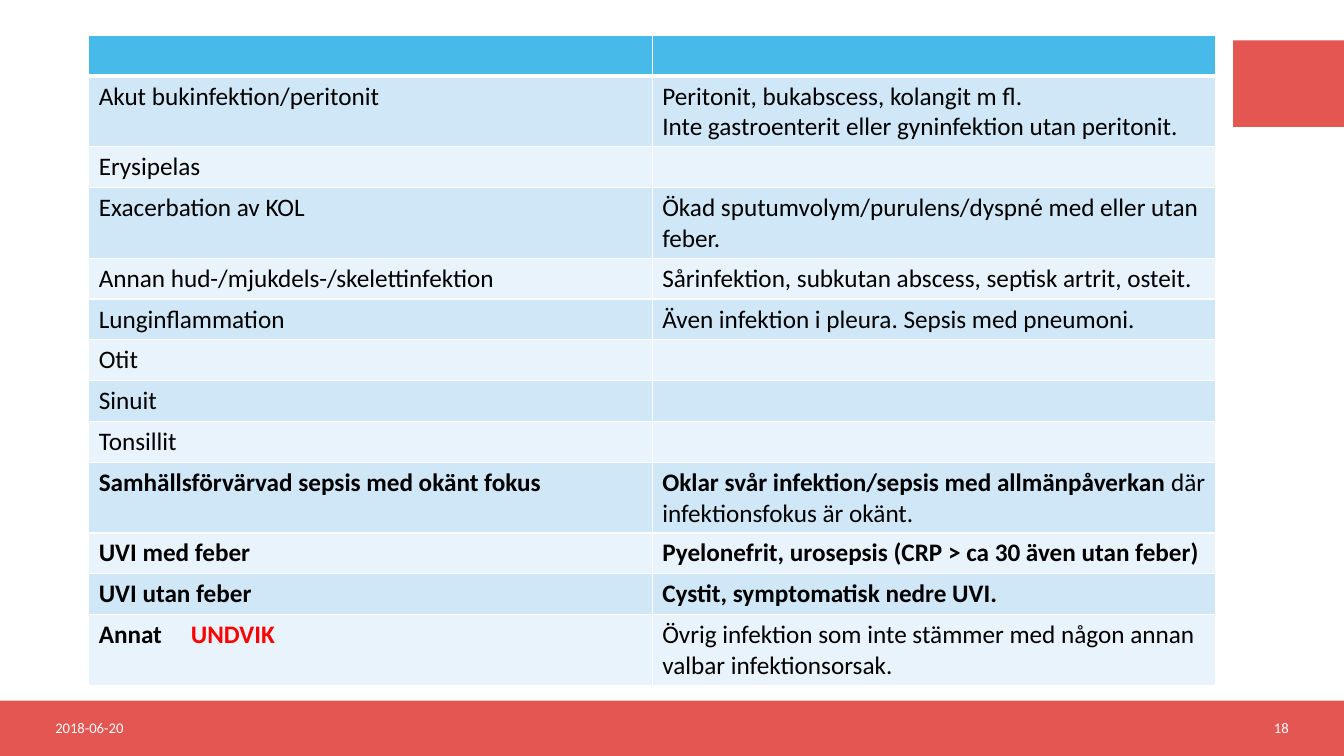
from pptx import Presentation
from pptx.dml.color import RGBColor as RGB
from pptx.enum.shapes import MSO_SHAPE as Shape
from pptx.enum.text import MSO_ANCHOR as Anchor, PP_ALIGN as Align
from pptx.oxml.ns import qn
from pptx.util import Inches, Pt
from lxml.etree import SubElement as Sub

RED = RGB(0xE4, 0x56, 0x51)
BLUE = RGB(0x47, 0xBA, 0xEA)
MID = RGB(0xCF, 0xE7, 0xF7)
PALE = RGB(0xE9, 0xF3, 0xFB)
WHITE = RGB(0xFF, 0xFF, 0xFF)
BLACK = RGB(0, 0, 0)
ALERT = RGB(0xFF, 0, 0)

COLS, ROWS = 40, 30
TAB = 2.74  # columns from the cell's text edge to the warning


def run(text, bold=False, color=BLACK):
    return text, bold, color


def line(text, bold=False):
    """Return a cell that holds one paragraph of one run."""
    return [[run(text, bold)]]


# A cell is a list of paragraphs, and a paragraph a list of runs.
CAUSES = [
    ([], []),
    (line("Akut bukinfektion/peritonit"),
     line("Peritonit, bukabscess, kolangit m fl.")
     + line("Inte gastroenterit eller gyninfektion utan peritonit.")),
    (line("Erysipelas"), []),
    (line("Exacerbation av KOL"),
     line("Ökad sputumvolym/purulens/dyspné med eller utan feber.")),
    (line("Annan hud-/mjukdels-/skelettinfektion"),
     line("Sårinfektion, subkutan abscess, septisk artrit, osteit.")),
    (line("Lunginflammation"),
     line("Även infektion i pleura. Sepsis med pneumoni.")),
    (line("Otit"), []),
    (line("Sinuit"), []),
    (line("Tonsillit"), []),
    (line("Samhällsförvärvad sepsis med okänt fokus", True),
     [[run("Oklar svår infektion/sepsis med allmänpåverkan", True),
       run(" där infektionsfokus är okänt.")]]),
    (line("UVI med feber", True),
     line("Pyelonefrit, urosepsis (CRP > ca 30 även utan feber)", True)),
    (line("UVI utan feber", True),
     line("Cystit, symptomatisk nedre UVI.", True)),
    ([[run("Annat\t", True), run("UNDVIK", True, ALERT)]],
     line("Övrig infektion som inte stämmer med någon annan "
          "valbar infektionsorsak.")),
]


class Deck:
    """Holds the style, the grid and the current slide."""
    font = "Calibri"
    body, small = Pt(18), Pt(10.5)

    def __init__(self):
        self.prs = Presentation()
        self.prs.slide_width = Inches(13.33)
        self.prs.slide_height = Inches(7.5)
        self.col = self.prs.slide_width / COLS
        self.row = self.prs.slide_height / ROWS
        self.slide = self.prs.slides.add_slide(self.prs.slide_layouts[6])

    def area(self, x, y, w, h):
        """Turn grid columns and rows into lengths."""
        return (round(x * self.col), round(y * self.row),
                round(w * self.col), round(h * self.row))

    def add_text(self, para, runs, size):
        for text, bold, color in runs:
            piece = para.add_run()
            piece.text = text
            font = piece.font
            font.name, font.size, font.bold = self.font, size, bold
            font.color.rgb = color

    def block(self, *grid):
        box = self.slide.shapes.add_shape(Shape.RECTANGLE, *self.area(*grid))
        box.shadow.inherit = False
        box.fill.solid()
        box.fill.fore_color.rgb = RED
        box.line.fill.background()

    def label(self, text, align, *grid):
        frame = self.slide.shapes.add_textbox(*self.area(*grid)).text_frame
        frame.word_wrap = True
        frame.vertical_anchor = Anchor.MIDDLE
        para = frame.paragraphs[0]
        para.alignment = align
        self.add_text(para, [run(text, color=WHITE)], self.small)

    def border(self, cell, low):
        """Draw white cell borders; low is the bottom width in points."""
        props = cell._tc.get_or_add_tcPr()
        for side, width in zip("LRTB", (1, 1, 1, low)):
            edge = Sub(props, qn("a:ln" + side), w=str(Pt(width)))
            fill = Sub(edge, qn("a:solidFill"))
            Sub(fill, qn("a:srgbClr"), val=str(WHITE))

    def stop(self, para):
        """Set the tab stop that separates a word from its warning."""
        tabs = Sub(para._p.get_or_add_pPr(), qn("a:tabLst"))
        Sub(tabs, qn("a:tab"), pos=str(round(TAB * self.col)), algn="l")

    def cell(self, cell, paras, fill, low):
        self.border(cell, low)
        cell.fill.solid()
        cell.fill.fore_color.rgb = fill
        frame = cell.text_frame
        for i, runs in enumerate(paras):
            para = frame.add_paragraph() if i else frame.paragraphs[0]
            if any("\t" in text for text, _, _ in runs):
                self.stop(para)
            self.add_text(para, runs, self.body)

    def table(self, data, *grid):
        table = self.slide.shapes.add_table(
            len(data), len(data[0]), *self.area(*grid)).table
        table.horz_banding = False
        for r, cells in enumerate(data):
            fill = (MID if r % 2 else PALE) if r else BLUE
            for c, paras in enumerate(cells):
                self.cell(table.cell(r, c), paras, fill, 1 if r else 3)


def main():
    deck = Deck()
    deck.block(0, 27.8, COLS, 2.2)
    deck.block(36.7, 1.6, 3.3, 3.44)
    deck.label("2018-06-20", Align.LEFT, 1.35, 27.8, 9, 2.16)
    deck.label("18", Align.RIGHT, 29.65, 27.8, 9, 2.16)
    deck.table(CAUSES, 2.64, 1.4, 33.54, 21.08)
    deck.prs.save("out.pptx")


if __name__ == "__main__":
    main()
